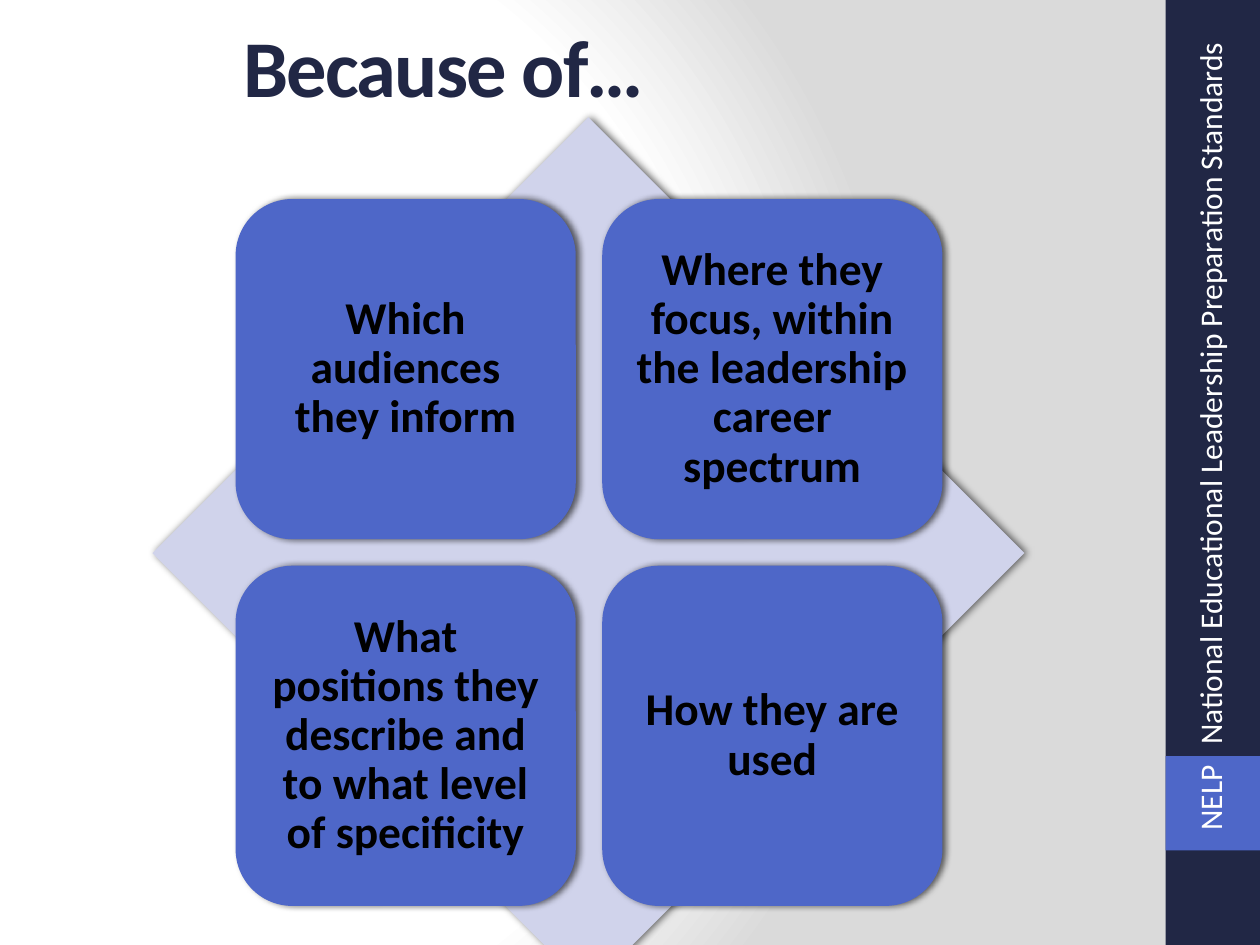
import pptx
import pptx.dml.color
import pptx.enum.shapes
import pptx.enum.text
import pptx.oxml
import pptx.oxml.ns
import pptx.util

Inches = pptx.util.Inches
Pt = pptx.util.Pt
RGBColor = pptx.dml.color.RGBColor
Shape = pptx.enum.shapes.MSO_SHAPE
Align = pptx.enum.text.PP_ALIGN
Anchor = pptx.enum.text.MSO_ANCHOR

NAVY = RGBColor(0x21, 0x27, 0x45)
BLUE = RGBColor(0x4E, 0x67, 0xC8)
LAVENDER = RGBColor(0xD0, 0xD3, 0xEB)
WHITE = RGBColor(0xFF, 0xFF, 0xFF)
BLACK = RGBColor(0, 0, 0)

NAMESPACE = pptx.oxml.ns.nsdecls("a")
BACKGROUND = f"""<a:gradFill {NAMESPACE} rotWithShape="1"><a:gsLst>
<a:gs pos="0"><a:srgbClr val="FFFFFF"/></a:gs>
<a:gs pos="75000"><a:srgbClr val="FFFFFF"/></a:gs>
<a:gs pos="100000"><a:srgbClr val="DADADA"/></a:gs></a:gsLst>
<a:path path="circle"><a:fillToRect l="20000" t="50000" r="100000" b="50000"/></a:path>
</a:gradFill>"""
SHADOW = f"""<a:effectLst {NAMESPACE}>
<a:outerShdw blurRad="{Pt(4)}" dist="{Pt(2)}" dir="0" algn="ctr" rotWithShape="0">
<a:srgbClr val="000000"><a:alpha val="60000"/></a:srgbClr></a:outerShdw></a:effectLst>"""
TAB_STOP = f'<a:tabLst {NAMESPACE}><a:tab pos="{Inches(0.68)}" algn="l"/></a:tabLst>'


class SlideBuilder:
    """Holds the style and the current slide."""

    font_name = "Calibri"

    def __init__(self, deck):
        self.page = deck.slides.add_slide(deck.slide_layouts[5])

    def background(self):
        self.page.background.fill.solid()
        properties = self.page.element.cSld.bg.bgPr
        properties.replace(properties[0], pptx.oxml.parse_xml(BACKGROUND))

    def shape(self, kind, left, top, width, height, color, shadow=False):
        shape = self.page.shapes.add_shape(
            kind, Inches(left), Inches(top), Inches(width), Inches(height))
        shape.fill.solid()
        shape.fill.fore_color.rgb = color
        shape.line.fill.background()
        shape.shadow.inherit = False
        if shadow:
            properties = shape.element.spPr
            empty = properties.find(pptx.oxml.ns.qn("a:effectLst"))
            properties.replace(empty, pptx.oxml.parse_xml(SHADOW))
        return shape

    def text(self, shape, words, size, color, bold=False, align=Align.LEFT,
             spacing=1.0, **frame_format):
        frame = shape.text_frame
        for name, value in frame_format.items():
            setattr(frame, name, value)
        para = frame.paragraphs[0]
        para.alignment = align
        para.line_spacing = spacing
        span = para.add_run()
        span.text = words
        span.font.color.rgb = color
        for name, value in {"name": self.font_name, "size": Pt(size), "bold": bold}.items():
            setattr(span.font, name, value)
        return span

    def title(self, words):
        title = self.page.shapes.title
        place = {"left": 1.83, "top": 0, "width": 7.67, "height": 1.04}
        for name, value in place.items():
            setattr(title, name, Inches(value))
        span = self.text(title, words, 46, NAVY, bold=True, word_wrap=True,
                         vertical_anchor=Anchor.MIDDLE)
        span.font._element.set("spc", "-100")

    def card(self, left, top, size, words):
        card = self.shape(Shape.ROUNDED_RECTANGLE, left, top, size, size, BLUE, shadow=True)
        inset = Inches(0.11)
        self.text(card, words, 26, BLACK, bold=True, align=Align.CENTER, spacing=0.9,
                  word_wrap=True, vertical_anchor=Anchor.MIDDLE, margin_left=inset,
                  margin_right=inset, margin_top=inset, margin_bottom=inset)

    def vertical_label(self, left, top, width, height, words):
        box = self.page.shapes.add_textbox(
            Inches(left), Inches(top), Inches(width), Inches(height))
        self.text(box, words, 18, WHITE, word_wrap=False,
                  auto_size=pptx.enum.text.MSO_AUTO_SIZE.SHAPE_TO_FIT_TEXT)
        frame = box.text_frame
        frame._txBody.bodyPr.set("vert", "vert270")
        frame.paragraphs[0]._p.get_or_add_pPr().append(pptx.oxml.parse_xml(TAB_STOP))


def main():
    deck = pptx.Presentation()
    deck.slide_width, deck.slide_height = Inches(10), Inches(7.5)
    slide = SlideBuilder(deck)
    slide.background()

    # Side band with its accent square
    slide.shape(Shape.RECTANGLE, 9.25, 0, 0.75, 7.5, NAVY)
    slide.shape(Shape.RECTANGLE, 9.25, 6, 0.75, 0.75, BLUE)

    slide.title("Because of…")

    # Diamond behind a two-by-two grid of reasons
    slide.shape(Shape.DIAMOND, 1.21, 0.93, 6.92, 6.92, LAVENDER, shadow=True)
    reasons = [
        "Which audiences they inform",
        "Where they focus, within the leadership career spectrum",
        "What positions they describe and to what level of specificity",
        "How they are used",
    ]
    card_size, pitch = 2.7, 2.91
    for index, reason in enumerate(reasons):
        row, column = divmod(index, 2)
        slide.card(1.87 + column * pitch, 1.58 + row * pitch, card_size, reason)

    # Label running up the side band
    slide.vertical_label(9.4, 0.24, 0.5, 6.45,
                         "NELP\tNational Educational Leadership Preparation Standards")

    deck.save("out.pptx")


if __name__ == "__main__":
    main()
